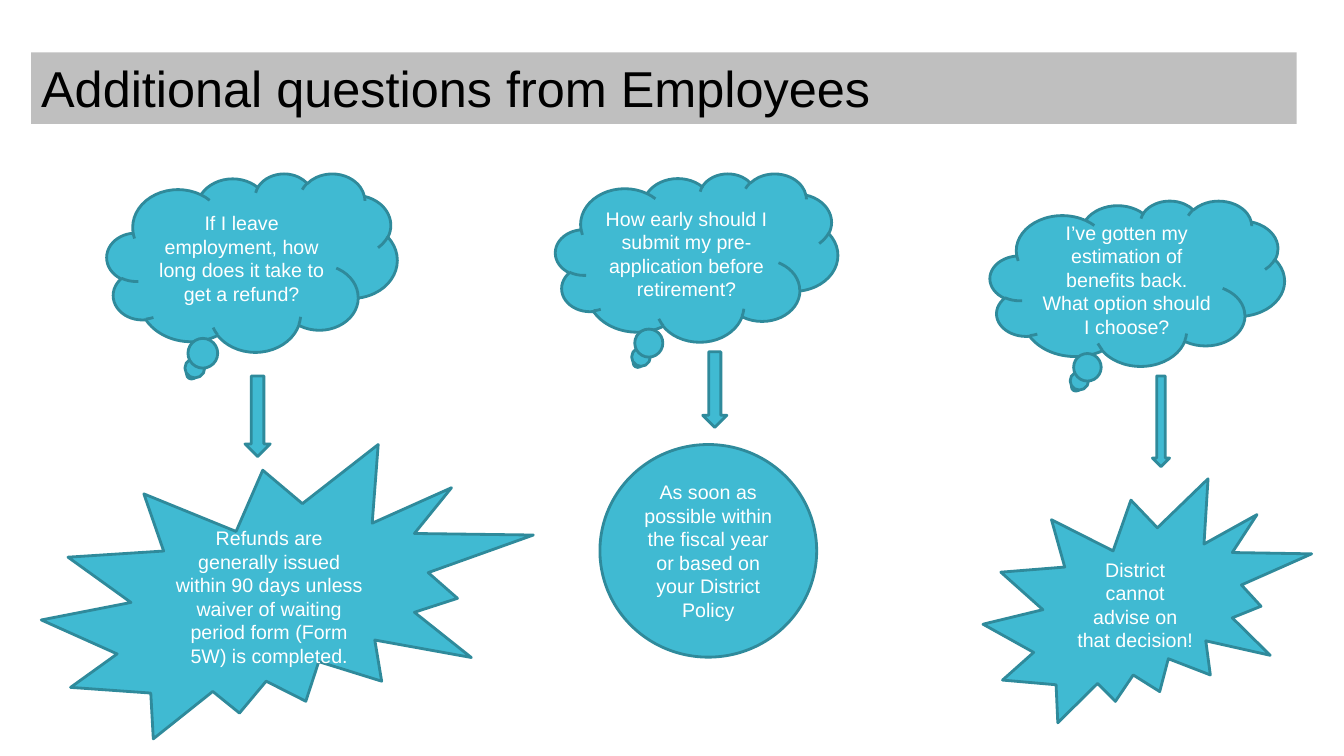
from pptx import Presentation
from pptx.dml.color import RGBColor
from pptx.enum.shapes import MSO_SHAPE
from pptx.enum.text import MSO_ANCHOR, MSO_AUTO_SIZE, PP_ALIGN
from pptx.util import Inches, Pt

CLOUD = MSO_SHAPE.CLOUD_CALLOUT
ARROW = MSO_SHAPE.DOWN_ARROW
BURST = MSO_SHAPE.EXPLOSION2
OVAL = MSO_SHAPE.OVAL
RECT = MSO_SHAPE.RECTANGLE
TOP, MIDDLE = MSO_ANCHOR.TOP, MSO_ANCHOR.MIDDLE
LEFT, CENTER = PP_ALIGN.LEFT, PP_ALIGN.CENTER
GROW = MSO_AUTO_SIZE.SHAPE_TO_FIT_TEXT

FONT = "Arial"
TEAL, DARK_TEAL, GREY = "40BAD2", "2F8A9B", "BFBFBF"
WHITE, BLACK = "FFFFFF", "000000"


def rgb(value):
    return RGBColor.from_string(value)


def add_shape(kind, box, fill, line=None, text="", size=14, color=WHITE,
              align=CENTER, anchor=MIDDLE):
    sp = s.shapes.add_shape(kind, *[Inches(v) for v in box])
    sp.shadow.inherit = False
    sp.fill.solid()
    sp.fill.fore_color.rgb = rgb(fill)
    if line:
        sp.line.color.rgb = rgb(line)
        sp.line.width = Pt(2)
    else:
        sp.line.fill.background()
    if text:
        tf = sp.text_frame
        tf.word_wrap = True
        tf.vertical_anchor = anchor
        p = tf.paragraphs[0]
        p.text = text
        p.alignment = align
        r = p.runs[0]
        r.font.name = FONT
        r.font.size = Pt(size)
        r.font.color.rgb = rgb(color)
    return sp


prs = Presentation()
prs.slide_width, prs.slide_height = Inches(13.33), Inches(7.5)
s = prs.slides.add_slide(prs.slide_layouts[6])

# Title bar
title = add_shape(RECT, (0.31, 0.52, 12.55, 0.71), GREY,
                  text="Additional questions from Employees",
                  size=36, color=BLACK, align=LEFT, anchor=TOP)
title.text_frame.auto_size = GROW

# Each column: question cloud, arrow, answer shape
columns = [
    ("If I leave employment, how long does it take to get a refund?",
     (1.06, 1.72, 2.88, 1.77), (2.43, 3.73, 0.25, 0.8),
     BURST, (0.41, 4.41, 4.88, 2.92),
     "Refunds are generally issued within 90 days unless waiver of waiting "
     "period form (Form 5W) is completed."),
    ("How early should I submit my pre-application before retirement?",
     (5.51, 1.72, 2.8, 1.67), (6.97, 3.49, 0.24, 0.75),
     OVAL, (5.95, 4.41, 2.15, 2.11),
     "As soon as possible within the fiscal year or based on your "
     "District Policy"),
    ("I’ve gotten my estimation of benefits back. What option should I choose?",
     (9.82, 1.99, 2.92, 1.64), (11.43, 3.73, 0.17, 0.9),
     BURST, (9.75, 4.75, 3.26, 2.42),
     "District cannot advise on that decision!"),
]
for question, cloud_box, arrow_box, answer_kind, answer_box, answer in columns:
    add_shape(CLOUD, cloud_box, TEAL, DARK_TEAL, question)
    add_shape(ARROW, arrow_box, TEAL, DARK_TEAL)
    add_shape(answer_kind, answer_box, TEAL, DARK_TEAL, answer)

prs.save("out.pptx")
